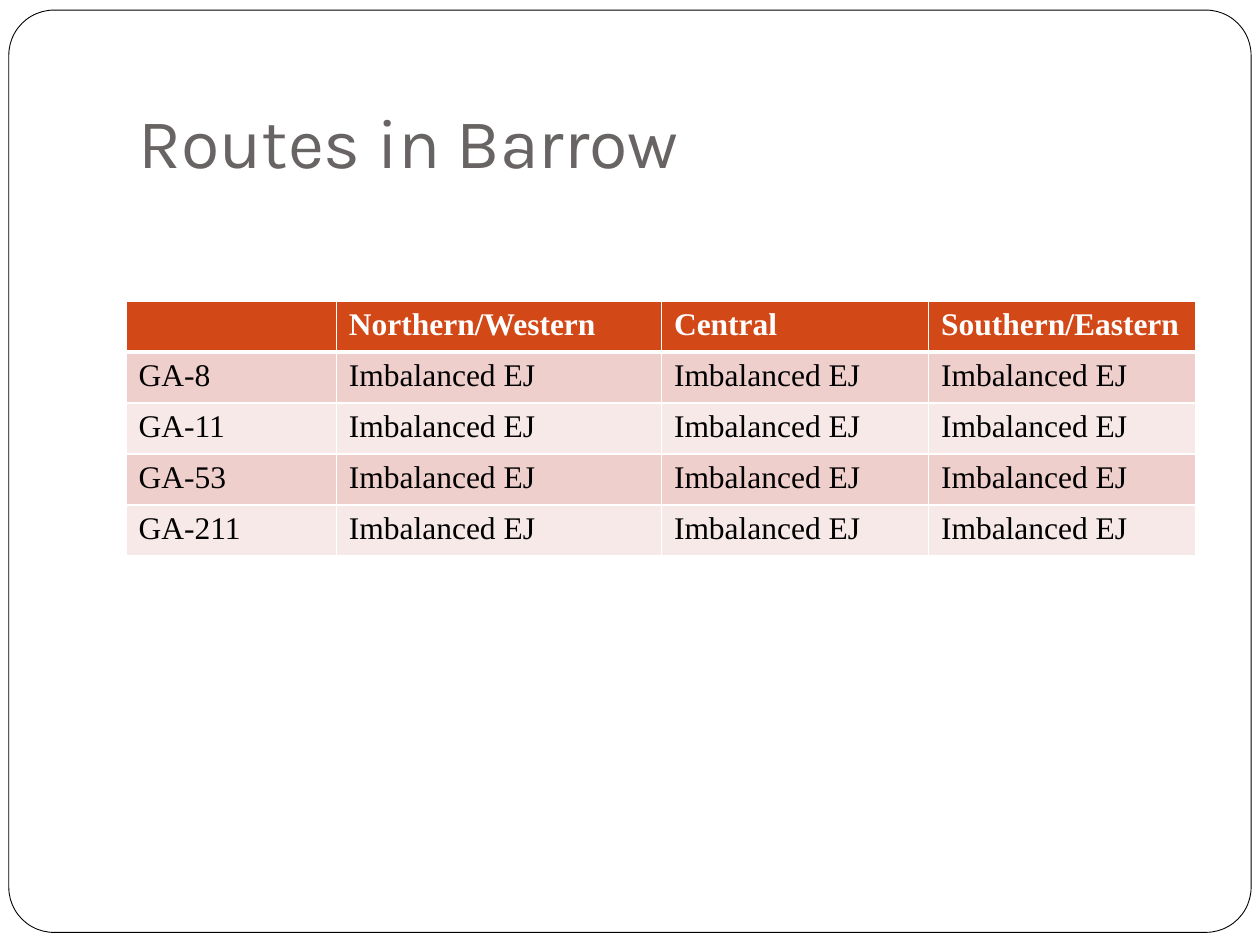
from lxml.etree import SubElement
from pptx import Presentation
from pptx.dml.color import RGBColor
from pptx.enum.shapes import MSO_SHAPE
from pptx.enum.text import MSO_ANCHOR
from pptx.oxml.ns import qn
from pptx.util import Inches, Pt

WHITE = RGBColor(0xFF, 0xFF, 0xFF)
BLACK = RGBColor(0x00, 0x00, 0x00)
GRAY = RGBColor(0x69, 0x64, 0x64)
ORANGE = RGBColor(0xD3, 0x48, 0x17)
BANDS = [RGBColor(0xEF, 0xCF, 0xCC), RGBColor(0xF7, 0xE9, 0xE8)]

HEADERS = ["", "Northern/Western", "Central", "Southern/Eastern"]
ROUTES = ["GA-8", "GA-11", "GA-53", "GA-211"]
STATUS = "Imbalanced EJ"
COL_WIDTHS = [1.67, 2.58, 2.12, 2.12]
ROW_HEIGHT = 0.405


def format_font(font, name, size, color, bold=False):
    font.name = name
    font.size = Pt(size)
    font.color.rgb = color
    font.bold = bold


def add_frame(s):
    sp = s.shapes.add_shape(MSO_SHAPE.ROUNDED_RECTANGLE, Inches(0.07),
                            Inches(0.08), Inches(9.86), Inches(7.32))
    sp.adjustments[0] = 0.049
    sp.shadow.inherit = False
    sp.fill.solid()
    sp.fill.fore_color.rgb = WHITE
    sp.line.color.rgb = BLACK
    sp.line.width = Pt(0.5)


def add_title(s, text):
    sp = s.shapes.add_textbox(Inches(1), Inches(0.3), Inches(8.5), Inches(1.25))
    tf = sp.text_frame
    tf.word_wrap = True
    tf.vertical_anchor = MSO_ANCHOR.BOTTOM
    tf.margin_bottom = Inches(0.1)
    tf.text = text
    format_font(tf.paragraphs[0].runs[0].font, "Karla", 40, GRAY)


def set_borders(cell, widths):
    tcPr = cell._tc.get_or_add_tcPr()
    for side, width in widths.items():
        ln = SubElement(tcPr, qn(f"a:ln{side}"), w=str(Pt(width)))
        fill = SubElement(ln, qn("a:solidFill"))
        SubElement(fill, qn("a:srgbClr"), val=str(WHITE))


def format_cell(cell, text, row):
    is_header = row == 0
    # Borders come before the fill in the cell properties
    set_borders(cell, {"L": 1, "R": 1,
                       "T": 3 if row == 1 else 1,
                       "B": 3 if is_header else 1})
    cell.fill.solid()
    cell.fill.fore_color.rgb = ORANGE if is_header else BANDS[(row - 1) % 2]
    cell.text = text
    for r in cell.text_frame.paragraphs[0].runs:
        format_font(r.font, "Times New Roman", 18,
                    WHITE if is_header else BLACK, is_header)


def add_route_table(s):
    rows = [HEADERS] + [[route] + [STATUS] * 3 for route in ROUTES]
    table = s.shapes.add_table(len(rows), len(HEADERS), Inches(1), Inches(2.39),
                               Inches(sum(COL_WIDTHS)),
                               Inches(ROW_HEIGHT * len(rows))).table
    for column, width in zip(table.columns, COL_WIDTHS):
        column.width = Inches(width)
    for i, row in enumerate(rows):
        for j, text in enumerate(row):
            format_cell(table.cell(i, j), text, i)


def main():
    prs = Presentation()
    prs.slide_width, prs.slide_height = Inches(10), Inches(7.5)
    s = prs.slides.add_slide(prs.slide_layouts[6])

    # Rounded page border
    add_frame(s)
    # Title
    add_title(s, "Routes in Barrow")
    # Routes by region
    add_route_table(s)

    prs.save("out.pptx")


if __name__ == "__main__":
    main()
